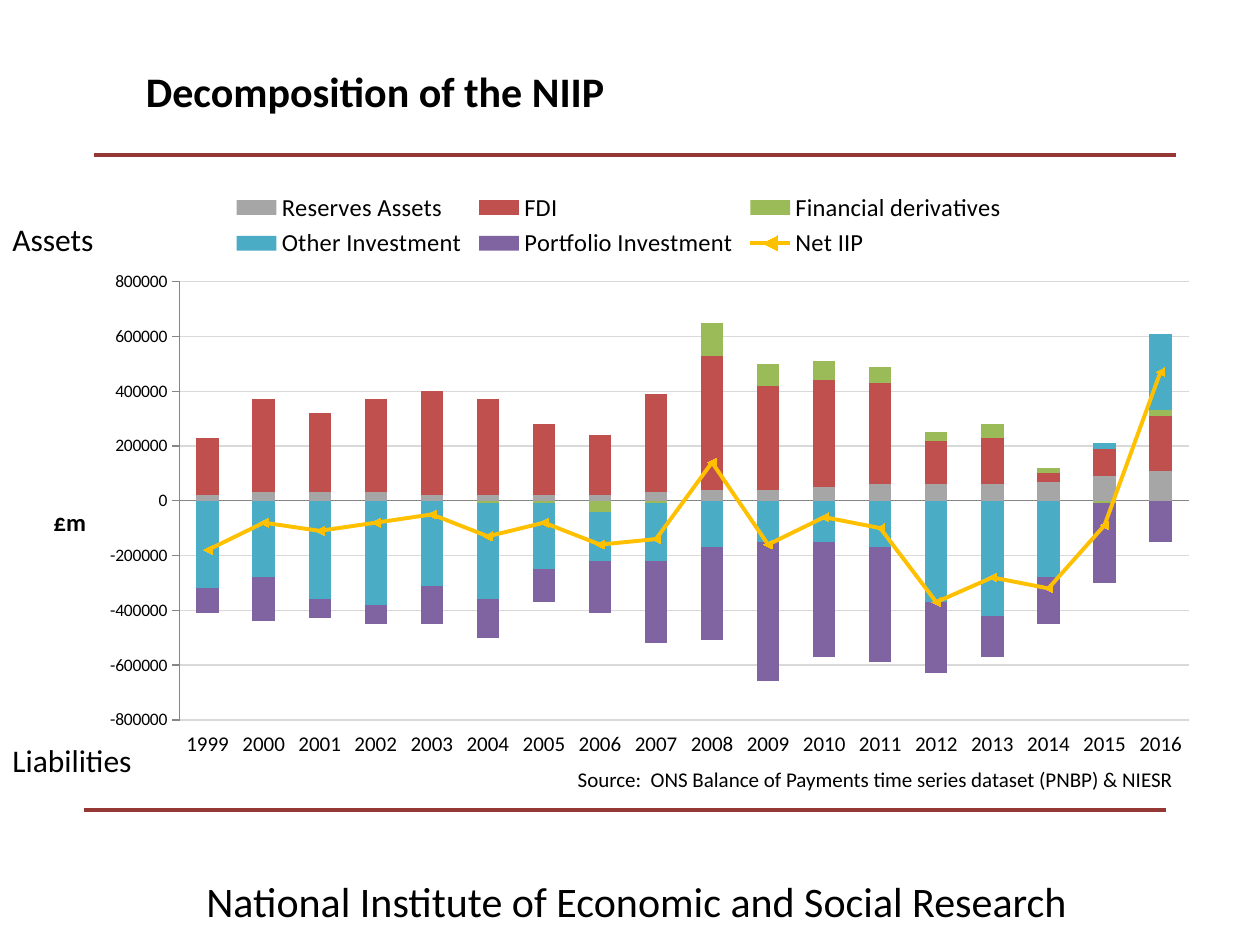
"""Build the slide on the decomposition of the NIIP."""
import pptx
import pptx.chart.data
import pptx.dml.color
import pptx.enum.chart
import pptx.enum.shapes
import pptx.enum.text
import pptx.oxml
import pptx.oxml.ns
import pptx.util
from pptx.util import Cm, Pt

RGBColor = pptx.dml.color.RGBColor
BLACK = RGBColor(0x00, 0x00, 0x00)
RULE_RED = RGBColor(0x95, 0x37, 0x35)
GRID_GREY = RGBColor(0xD9, 0xD9, 0xD9)
AXIS_GREY = RGBColor(0x86, 0x86, 0x86)
GREY = RGBColor(0xA6, 0xA6, 0xA6)
RED = RGBColor(0xC0, 0x50, 0x4D)
GREEN = RGBColor(0x9B, 0xBB, 0x59)
TEAL = RGBColor(0x4B, 0xAC, 0xC6)
PURPLE = RGBColor(0x80, 0x64, 0xA2)
GOLD = RGBColor(0xFF, 0xC0, 0x00)
FONT = "Calibri"
LEFT = pptx.enum.text.PP_ALIGN.LEFT
RIGHT = pptx.enum.text.PP_ALIGN.RIGHT
qn = pptx.oxml.ns.qn


def set_font(font, size, bold=False):
    font.name = FONT
    font.size = Pt(size)
    font.bold = bold
    font.color.rgb = BLACK


def set_layout(parent, index, **values):
    layout = parent.find(qn("c:layout"))
    if layout is None:
        layout = parent.makeelement(qn("c:layout"), {})
        parent.insert(index, layout)
    manual = layout.makeelement(qn("c:manualLayout"), {})
    layout.append(manual)
    for tag, value in values.items():
        manual.append(manual.makeelement(qn("c:" + tag), {"val": str(value)}))


deck = pptx.Presentation()
deck.slide_width = Cm(25.4)
deck.slide_height = Cm(19.05)
page = deck.slides.add_slide(deck.slide_layouts[6])

for left, top in ((1.9, 3.12), (1.7, 16.33)):
    rule = page.shapes.add_connector(
        pptx.enum.shapes.MSO_CONNECTOR.STRAIGHT, Cm(left), Cm(top), Cm(left + 21.8), Cm(top))
    rule.line.color.rgb = RULE_RED
    rule.line.width = Pt(2.25)
    properties = rule.line._get_or_add_ln().getparent()
    properties.append(properties.makeelement(qn("a:effectLst"), {}))

SERIES = (
    ("Reserves Assets", GREY,
     (20, 30, 30, 30, 20, 20, 20, 20, 30, 40, 40, 50, 60, 60, 60, 70, 90, 110)),
    ("FDI", RED,
     (210, 340, 290, 340, 380, 350, 260, 220, 360, 490, 380, 390, 370, 160, 170, 30, 100, 200)),
    ("Financial derivatives", GREEN,
     (0, 0, 0, 0, 0, -10, -10, -40, -10, 120, 80, 70, 60, 30, 50, 20, -10, 20)),
    ("Other Investment", TEAL,
     (-320, -280, -360, -380, -310, -350, -240, -180, -210,
      -170, -150, -150, -170, -370, -420, -280, 20, 280)),
    ("Portfolio Investment", PURPLE,
     (-90, -160, -70, -70, -140, -140, -120, -190, -300,
      -340, -510, -420, -420, -260, -150, -170, -290, -150)),
    ("Net IIP", GOLD,
     (-180, -80, -110, -80, -50, -130, -80, -160, -140,
      140, -160, -60, -100, -370, -280, -320, -90, 470)),
)
chart_data = pptx.chart.data.CategoryChartData()
chart_data.categories = [str(year) for year in range(1999, 2017)]
for name, color, thousands in SERIES:
    chart_data.add_series(name, [value * 1000 for value in thousands])
chart = page.shapes.add_chart(
    pptx.enum.chart.XL_CHART_TYPE.COLUMN_STACKED,
    Cm(0.51), Cm(3.53), Cm(23.93), Cm(11.94), chart_data).chart
set_font(chart.font, 10)
chart.has_title = False

columns = chart.plots[0]
columns.gap_width = 150
columns.overlap = 100
columns.vary_by_categories = False
for column, (name, color, thousands) in zip(columns.series, SERIES):
    column.format.fill.solid()
    column.format.fill.fore_color.rgb = color
    column.invert_if_negative = False

bar_chart = columns._element
net_series = bar_chart.findall(qn("c:ser"))[-1]
net_series.remove(net_series.find(qn("c:invertIfNegative")))
net_series.remove(net_series.find(qn("c:spPr")))
axis_ids = "".join(
    f'<c:axId val="{axis.get("val")}"/>' for axis in bar_chart.findall(qn("c:axId")))
line_chart = pptx.oxml.parse_xml(
    f'<c:lineChart {pptx.oxml.ns.nsdecls("c")}><c:grouping val="standard"/>'
    f'<c:varyColors val="0"/><c:marker val="1"/>{axis_ids}</c:lineChart>')
line_chart.insert(2, net_series)
bar_chart.addnext(line_chart)

net_line = chart.plots[1].series[0]
net_line.smooth = False
net_line.format.line.color.rgb = GOLD
net_line.format.line.width = Pt(2.25)
net_line.marker.style = pptx.enum.chart.XL_MARKER_STYLE.AUTOMATIC
net_line.marker.size = 5
net_line.marker.format.fill.solid()
net_line.marker.format.fill.fore_color.rgb = GOLD
net_line.marker.format.line.color.rgb = GOLD

TICK = pptx.enum.chart.XL_TICK_MARK
years = chart.category_axis
years.tick_label_position = pptx.enum.chart.XL_TICK_LABEL_POSITION.LOW
years.major_tick_mark = TICK.NONE
years.format.line.color.rgb = AXIS_GREY
set_font(years.tick_labels.font, 12)

amounts = chart.value_axis
amounts.minimum_scale = -800000
amounts.maximum_scale = 800000
amounts.major_unit = 200000
amounts.major_tick_mark = TICK.OUTSIDE
amounts.format.line.color.rgb = AXIS_GREY
amounts.major_gridlines.format.line.color.rgb = GRID_GREY
amounts.major_gridlines.format.line.width = Pt(0.75)
set_font(amounts.tick_labels.font, 10)
amounts.tick_labels.number_format = "General"
amounts.tick_labels.number_format_is_linked = False

unit_frame = amounts.axis_title.text_frame
unit = unit_frame.paragraphs[0].add_run()
unit.text = "£m"
set_font(unit.font, 14, True)
unit_frame._txBody.find(qn("a:bodyPr")).set("rot", "0")
set_layout(amounts.axis_title._element, 1, xMode="edge", yMode="edge", x=0.02, y=0.55)

chart.has_legend = True
chart.legend.position = pptx.enum.chart.XL_LEGEND_POSITION.TOP
chart.legend.include_in_layout = False
set_font(chart.legend.font, 14)
set_layout(chart.legend._element, 1, xMode="edge", yMode="edge", x=0.17, y=0.02, w=0.66, h=0.13)
set_layout(bar_chart.getparent(), 0, layoutTarget="inner", xMode="edge", yMode="edge",
           x=0.13, y=0.18, w=0.85, h=0.74)

TEXTS = (
    ("National Institute of Economic and Social Research", 3.91, 17.53, 20.19, 1.02, 24, False, LEFT),
    ("Decomposition of the NIIP", 2.69, 1.19, 20.4, 1.27, 24, True, LEFT),
    ("Source:  ONS Balance of Payments time series dataset (PNBP) & NIESR",
     5.31, 15.32, 18.59, 0.76, 12, False, RIGHT),
    ("Assets", 0, 4.32, 2.69, 1.02, 18, False, LEFT),
    ("Liabilities", 0, 14.81, 3.12, 1.02, 18, False, LEFT),
)
for text, left, top, width, height, size, bold, alignment in TEXTS:
    box = page.shapes.add_textbox(Cm(left), Cm(top), Cm(width), Cm(height))
    box.text_frame.word_wrap = True
    para = box.text_frame.paragraphs[0]
    para.alignment = alignment
    span = para.add_run()
    span.text = text
    set_font(span.font, size, bold)

deck.save("out.pptx")
